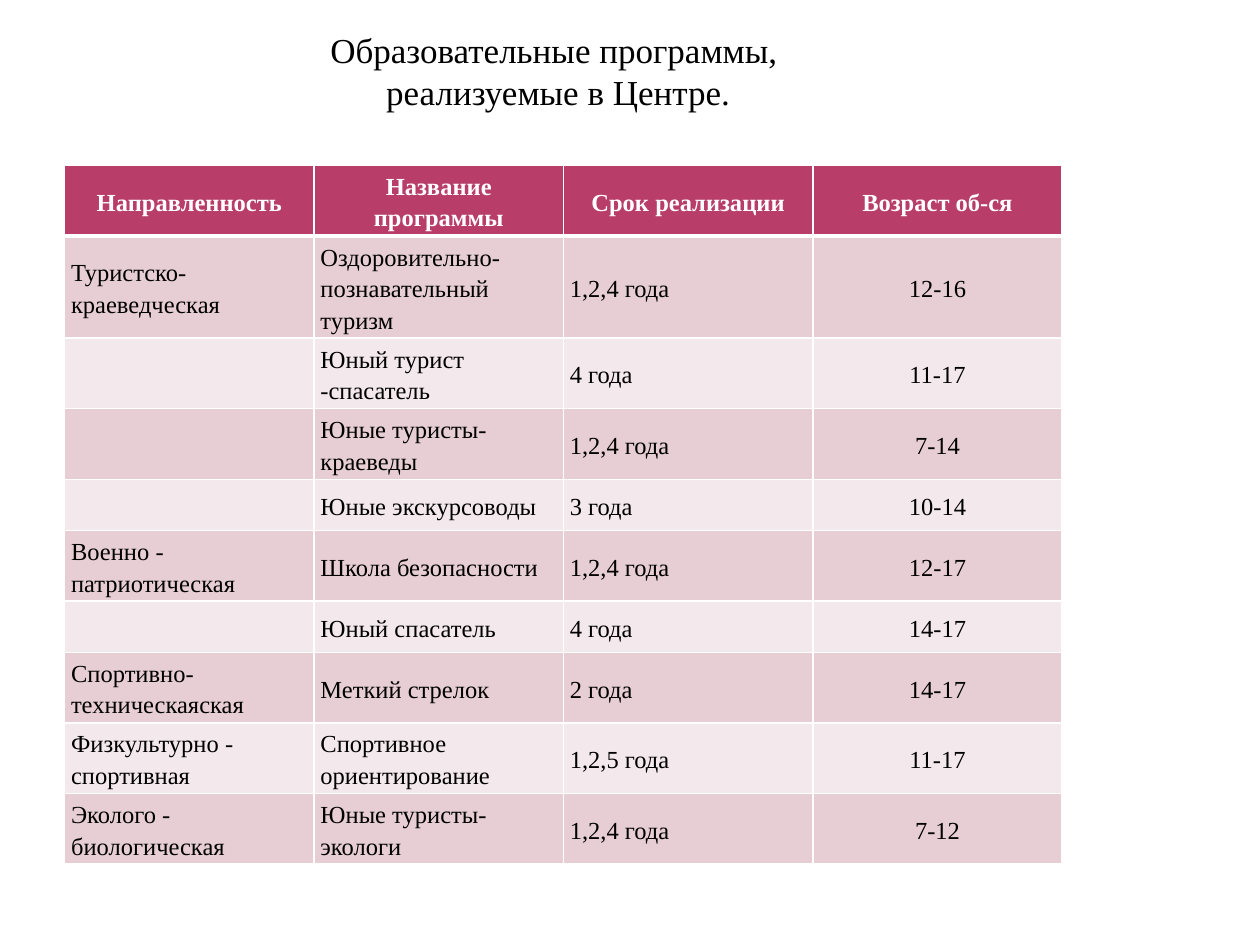
from dataclasses import dataclass

from lxml import etree
from pptx import Presentation, util as u
from pptx.dml.color import RGBColor
from pptx.enum import text
from pptx.oxml import ns


@dataclass(frozen=True)
class Theme:
    font: str = "Times New Roman"
    title_size: float = 20
    table_size: float = 14
    title_leading: float = 24
    table_leading: float = 18
    dark: str = "000000"
    light: str = "FFFFFF"
    header_fill: str = "B83D68"
    bands: tuple[str, str] = ("E6CED4", "F3E8EB")
    thin_border: float = 1
    thick_border: float = 3


@dataclass(frozen=True)
class Program:
    field: str
    name: str
    duration: str
    ages: str
    lines: int = 2


THEME = Theme()
TITLE = ("Образовательные программы, ", "реализуемые в Центре.")
HEADER = Program("Направленность", "Название программы", "Срок реализации", "Возраст об-ся")
PROGRAMS = (
    Program("Туристско- краеведческая", "Оздоровительно-познавательный туризм", "1,2,4 года", "12-16", 3),
    Program("", "Юный турист -спасатель", "4 года", "11-17"),
    Program("", "Юные туристы- краеведы", "1,2,4 года", "7-14"),
    Program("", "Юные экскурсоводы", "3 года", "10-14", 1),
    Program("Военно - патриотическая", "Школа безопасности", "1,2,4 года", "12-17"),
    Program("", "Юный спасатель", "4 года", "14-17", 1),
    Program("Спортивно- техническаяская", "Меткий стрелок", "2 года", "14-17"),
    Program("Физкультурно - спортивная", "Спортивное ориентирование", "1,2,5 года", "11-17"),
    Program("Эколого - биологическая", "Юные туристы- экологи", "1,2,4 года", "7-12"),
)
COLUMN_WIDTH = 142.5
MIN_ROW_HEIGHT = 29.3
SIDE_MARGIN = 3.6
EDGE_MARGIN = 2.16


def style_paragraph(paragraph, size: float, color: str, leading: float, centered: bool, bold: bool = False) -> None:
    paragraph.alignment = text.PP_ALIGN.CENTER if centered else text.PP_ALIGN.LEFT
    paragraph.line_spacing = u.Pt(leading)
    paragraph.font.name = THEME.font
    paragraph.font.size = u.Pt(size)
    paragraph.font.bold = bold
    paragraph.font.color.rgb = RGBColor.from_string(color)


def add_title(slide) -> None:
    box = slide.shapes.add_textbox(u.Pt(36), u.Pt(16), u.Pt(562.5), u.Pt(85))
    frame = box.text_frame
    frame.word_wrap = True
    frame.margin_left = u.Pt(SIDE_MARGIN)
    frame.margin_top = frame.margin_right = frame.margin_bottom = 0
    frame.text = "\n".join(TITLE)
    for paragraph in frame.paragraphs:
        style_paragraph(paragraph, THEME.title_size, THEME.dark, THEME.title_leading, True)


def set_borders(cell, top: float, bottom: float) -> None:
    properties = cell._tc.get_or_add_tcPr()
    widths = {"L": THEME.thin_border, "R": THEME.thin_border, "T": top, "B": bottom}
    for side, width in widths.items():
        line = etree.SubElement(properties, ns.qn(f"a:ln{side}"), w=str(u.Pt(width)))
        fill = etree.SubElement(line, ns.qn("a:solidFill"))
        etree.SubElement(fill, ns.qn("a:srgbClr"), val=THEME.light)


def fill_cell(cell, value: str, row: int, column: int) -> None:
    header = row == 0
    set_borders(
        cell,
        top=THEME.thick_border if row == 1 else THEME.thin_border,
        bottom=THEME.thick_border if header else THEME.thin_border,
    )
    cell.fill.solid()
    fill = THEME.header_fill if header else THEME.bands[(row - 1) % 2]
    cell.fill.fore_color.rgb = RGBColor.from_string(fill)
    cell.vertical_anchor = text.MSO_ANCHOR.MIDDLE
    cell.margin_left = cell.margin_right = u.Pt(SIDE_MARGIN)
    cell.margin_top = cell.margin_bottom = u.Pt(EDGE_MARGIN)
    cell.text = value
    style_paragraph(
        cell.text_frame.paragraphs[0],
        THEME.table_size,
        THEME.light if header else THEME.dark,
        THEME.table_leading,
        centered=header or column == 3,
        bold=header,
    )


def row_height(program: Program) -> float:
    return max(MIN_ROW_HEIGHT, program.lines * THEME.table_leading + 2 * EDGE_MARGIN)


def add_program_table(slide) -> None:
    rows = (HEADER, *PROGRAMS)
    heights = [row_height(program) for program in rows]
    table = slide.shapes.add_table(
        len(rows), 4, u.Pt(37), u.Pt(94.5), u.Pt(4 * COLUMN_WIDTH), u.Pt(sum(heights))
    ).table
    for column in table.columns:
        column.width = u.Pt(COLUMN_WIDTH)
    for row, program in enumerate(rows):
        table.rows[row].height = u.Pt(heights[row])
        values = (program.field, program.name, program.duration, program.ages)
        for column, value in enumerate(values):
            fill_cell(table.cell(row, column), value, row, column)


def main() -> None:
    presentation = Presentation()
    presentation.slide_width, presentation.slide_height = u.Pt(720), u.Pt(540)
    slide = presentation.slides.add_slide(presentation.slide_layouts[6])
    add_title(slide)
    add_program_table(slide)
    presentation.save("out.pptx")


if __name__ == "__main__":
    main()
